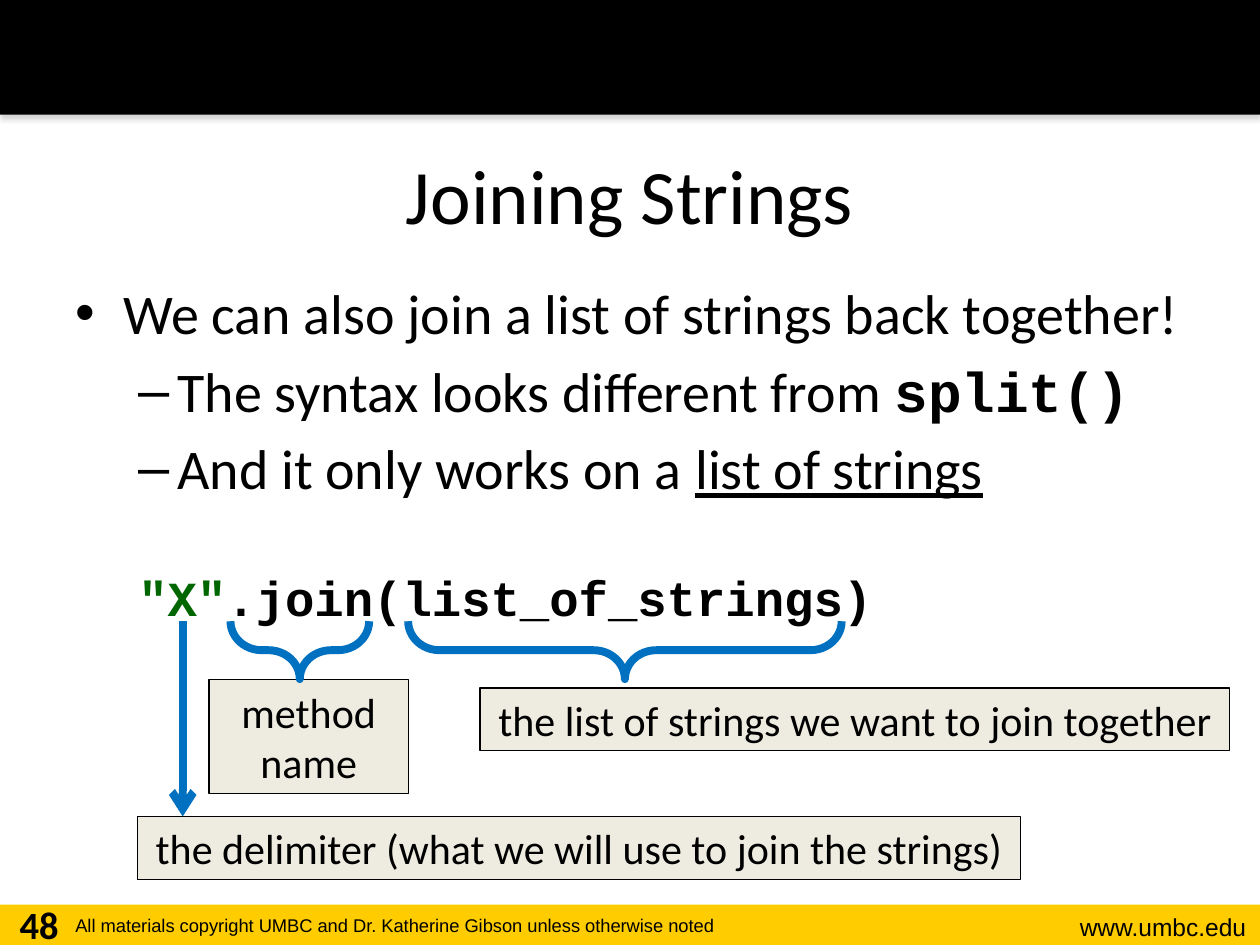
from lxml import etree
from pptx import Presentation
from pptx import util as u
from pptx.dml import color
from pptx.enum import shapes, text
from pptx.oxml import ns

PX = 9144
HUES = {"ink": "000000", "gold": "FFCC00", "sand": "EEECE1",
        "blue": "0070C0", "green": "006600", "gray": "808080"}
LEFT, MID, RIGHT = text.PP_ALIGN.LEFT, text.PP_ALIGN.CENTER, text.PP_ALIGN.RIGHT
KIND = shapes.MSO_SHAPE


def px(*nums):
    return [u.Emu(n * PX) for n in nums]


def hue(name):
    return color.RGBColor.from_string(HUES[name])


def sub(node, tag, **attrs):
    return etree.SubElement(node, ns.qn(tag), attrs)


def style(run, size, face="Calibri", ink="ink", bold=False, under=False):
    font = run.font
    font.size, font.name = u.Pt(size), face
    font.bold, font.underline = bold, under
    font.color.rgb = hue(ink)


def shape(slide, kind, box, fill=None, line=None, width=0.75):
    item = slide.shapes.add_shape(kind, *px(*box))
    item.shadow.inherit = False
    if fill:
        item.fill.solid()
        item.fill.fore_color.rgb = hue(fill)
    else:
        item.fill.background()
    if line:
        item.line.color.rgb = hue(line)
        item.line.width = u.Pt(width)
    else:
        item.line.fill.background()
    return item


def words(item, line, size, align, **look):
    frame = item.text_frame
    frame.word_wrap = True
    frame.text = line
    para = frame.paragraphs[0]
    para.alignment = align
    style(para.runs[0], size, **look)
    return frame


def label(slide, box, line, size, align, **look):
    return words(slide.shapes.add_textbox(*px(*box)), line, size, align, **look)


def head(slide, box):
    bar = shape(slide, KIND.RECTANGLE, box, "ink")
    glow = sub(bar._element.spPr.find(ns.qn("a:effectLst")), "a:outerShdw",
               blurRad=str(u.Pt(3.1)), dist=str(u.Pt(1.8)),
               dir="5400000", algn="t", rotWithShape="0")
    tint = sub(glow, "a:srgbClr", val=HUES["gray"])
    sub(tint, "a:alpha", val="35000")


def foot(slide, box):
    x, y, w, h = box
    shape(slide, KIND.RECTANGLE, box, "gold")
    label(slide, (x + w - 200, y + 1, 199, 34), "www.umbc.edu", 14, RIGHT, face="Arial")
    label(slide, (x + 50, y + 3, 656, 29),
          "All materials copyright UMBC and Dr. Katherine Gibson unless otherwise noted",
          10.5, LEFT, face="Arial")
    label(slide, (x, y - 8, 62, 40), "48", 22, MID, bold=True)


def title(slide, box):
    frame = label(slide, box, "Joining Strings", 44, MID)
    frame.vertical_anchor = text.MSO_ANCHOR.MIDDLE


def body(slide, box):
    code = {"face": "Courier New", "bold": True}
    rows = [
        (0, 38, -38, "•", 0, [("We can also join a list of strings back together!", 32, {})]),
        (1, 81, -31, "–", 6, [("The syntax looks different from ", 32, {}),
                              ("split()", 32, code)]),
        (1, 81, -31, "–", 6, [("And it only works on a ", 32, {}),
                              ("list of strings", 32, {"under": True})]),
        (1, 50, 0, None, 38, [('"X"', 28, {**code, "ink": "green"}),
                              (".join(list_of_strings)", 28, code)]),
    ]
    frame = slide.shapes.add_textbox(*px(*box)).text_frame
    frame.word_wrap = True
    for i, (level, left, hang, mark, gap, runs) in enumerate(rows):
        para = frame.paragraphs[0] if i == 0 else frame.add_paragraph()
        para.level = level
        para.space_before = u.Pt(gap)
        props = para._p.get_or_add_pPr()
        props.set("marL", str(left * PX))
        props.set("indent", str(hang * PX))
        if mark:
            sub(props, "a:buFont", typeface="Arial")
            sub(props, "a:buChar", char=mark)
        else:
            sub(props, "a:buNone")
        for line, size, look in runs:
            run = para.add_run()
            run.text = line
            style(run, size, **look)


def brace(slide, x, y, span, deep):
    box = (x + (span - deep) / 2, y + (deep - span) / 2, deep, span)
    item = shape(slide, KIND.LEFT_BRACE, [round(n) for n in box], line="blue", width=4.5)
    item.rotation = 270
    item.adjustments[0], item.adjustments[1] = 0.54, 0.5


def arrow(slide, x, top, end):
    item = slide.shapes.add_connector(shapes.MSO_CONNECTOR.STRAIGHT, *px(x, top, x, end))
    item.line.color.rgb = hue("blue")
    item.line.width = u.Pt(4.5)
    sub(item.line._get_or_add_ln(), "a:tailEnd", type="arrow")
    sub(item._element.spPr, "a:effectLst")


def notes(slide, box):
    x, y, w, h = box
    for dx, dy, wide, high, line in (
            (0, 155, 701, 50, "the delimiter (what we will use to join the strings)"),
            (57, 46, 158, 91, "method name"),
            (272, 53, 595, 50, "the list of strings we want to join together")):
        item = shape(slide, KIND.RECTANGLE, (x + dx, y + dy, wide, high), "sand", "ink")
        words(item, line, 24, MID)
    brace(slide, x + 74, y, 110, 46)
    arrow(slide, x + 36, y, y + 155)
    brace(slide, x + 215, y, 344, 46)


def main():
    deck = Presentation()
    deck.slide_width, deck.slide_height = px(1000, 750)
    slide = deck.slides.add_slide(deck.slide_layouts[6])
    foot(slide, (0, 718, 1000, 32))
    head(slide, (0, 0, 1000, 91))
    title(slide, (50, 91, 900, 125))
    body(slide, (50, 216, 900, 494))
    notes(slide, (109, 493, 867, 205))
    deck.save("out.pptx")


if __name__ == "__main__":
    main()
